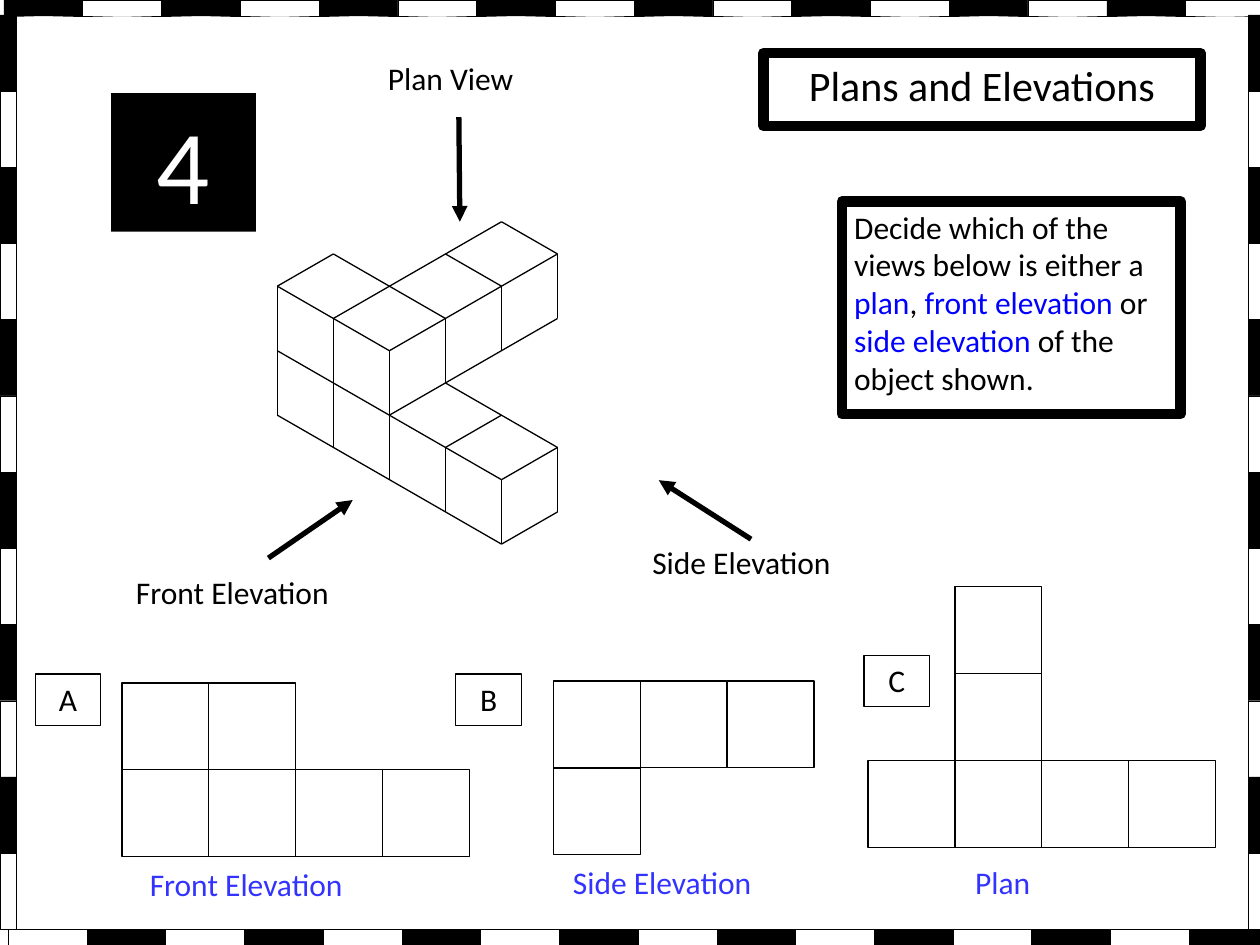
from dataclasses import dataclass

from lxml import etree
from pptx import Presentation
from pptx import util as u
from pptx.dml.color import RGBColor
from pptx.enum import shapes, text
from pptx.oxml import ns

BLACK = RGBColor(0x00, 0x00, 0x00)
WHITE = RGBColor(0xFF, 0xFF, 0xFF)
KEYWORD_BLUE = RGBColor(0x00, 0x00, 0xFF)
ANSWER_BLUE = RGBColor(0x33, 0x33, 0xFF)

FONT = "Calibri"
CELL = 1.75
BORDER_THICKNESS = 0.32
ISO_LEFT, ISO_TOP = 5.59, 5.77
ISO_COLUMN, ISO_ROW = 1.13, 0.65

Point = tuple[float, float]


@dataclass
class Label:
    runs: tuple[str, ...]
    left: float
    top: float
    width: float
    height: float = 1.02
    size: float = 18
    color: RGBColor = BLACK
    centred: bool = False
    outline: float = 0
    fill: RGBColor | None = None


@dataclass
class View:
    left: float
    top: float
    cells: tuple[tuple[int, int], ...]


@dataclass
class Border:
    first: Point
    last: Point
    count: int
    length: float
    rotation: int


EDGES = (
    ((4, 8), (5, 7)), ((4, 8), (0, 4)), ((4, 8), (4, 6)), ((4, 6), (5, 5)),
    ((4, 6), (0, 2)), ((2, 6), (2, 2)), ((3, 7), (3, 5)), ((5, 5), (3, 3)),
    ((2, 4), (5, 1)), ((3, 5), (4, 4)), ((1, 1), (1, 5)), ((2, 2), (5, -1)),
    ((2, 2), (0, 0)), ((1, 1), (4, -2)), ((1, -1), (3, 1)), ((5, 5), (5, 7)),
    ((3, 1), (3, 3)), ((3, -1), (4, 0)), ((4, 0), (4, 2)), ((4, -2), (5, -1)),
    ((5, -1), (5, 1)), ((0, 0), (0, 4)), ((0, 0), (1, -1)),
)

ARROWS = (
    ((5.41, 11.25), (7.11, 10.08)),
    ((15.14, 10.87), (13.28, 9.68)),
    ((9.25, 2.36), (9.27, 4.47)),
)

VIEWS = (
    View(2.46, 13.77, ((0, 0), (1, 0), (0, 1), (1, 1), (2, 1), (3, 1))),
    View(11.16, 13.73, ((0, 0), (1, 0), (2, 0), (0, 1))),
    View(17.5, 11.83, ((1, 0), (1, 1), (0, 2), (1, 2), (2, 2), (3, 2))),
)

BORDERS = (
    Border((0.08, 0), (23.9, 0), 16, 1.59, 0),
    Border((23.97, 18.74), (0.16, 18.74), 16, 1.59, 180),
    Border((24.56, 0.91), (24.56, 17.81), 12, 1.54, 90),
    Border((-0.61, 0.91), (-0.61, 17.81), 12, 1.54, 90),
)

PROMPT = ("Decide which of the views below is either a ", "plan", ", ",
          "front elevation", " or ", "side elevation", " of the object shown.")

LABELS = (
    Label(("Plans and Elevations",), 15.39, 1.07, 8.81, 1.47, 24, centred=True, outline=6),
    Label(PROMPT, 16.97, 4.06, 6.83, 4.29, outline=6),
    Label(("4",), 2.24, 1.88, 2.92, 2.79, 60, WHITE, centred=True, fill=BLACK),
    Label(("Front Elevation",), 2.49, 11.43, 4.95),
    Label(("Side Elevation",), 12.9, 10.82, 4.95),
    Label(("Plan View",), 7.57, 1.07, 3.56),
    Label(("Front Elevation",), 2.77, 17.32, 5.66, color=ANSWER_BLUE),
    Label(("Side Elevation",), 11.3, 17.27, 5.66, color=ANSWER_BLUE),
    Label(("Plan",), 19.41, 17.27, 5.26, color=ANSWER_BLUE),
    *(Label((letter,), left, top, 1.32, 1.04, centred=True, outline=0.75)
      for letter, left, top in (("A", 0.71, 13.59), ("B", 9.19, 13.59), ("C", 17.42, 13.21))),
)


def draw_box(slide, left: float, top: float, width: float, height: float,
             outline: float, fill: RGBColor | None = None):
    box = slide.shapes.add_shape(shapes.MSO_SHAPE.RECTANGLE,
                                 u.Cm(left), u.Cm(top), u.Cm(width), u.Cm(height))
    box.shadow.inherit = False
    if fill is None:
        box.fill.background()
    else:
        box.fill.solid()
        box.fill.fore_color.rgb = fill
    if outline:
        box.line.color.rgb = BLACK
        box.line.width = u.Pt(outline)
    else:
        box.line.fill.background()
    return box


def draw_line(slide, start: Point, end: Point, width: float, arrow: bool = False) -> None:
    edge = slide.shapes.add_connector(shapes.MSO_CONNECTOR.STRAIGHT,
                                      *(u.Cm(value) for value in (*start, *end)))
    edge.line.color.rgb = BLACK
    edge.line.width = u.Pt(width)
    if arrow:
        etree.SubElement(edge.line._get_or_add_ln(), ns.qn("a:tailEnd"), type="triangle")
    etree.SubElement(edge._element.spPr, ns.qn("a:effectLst"))


def iso_point(column: int, row: int) -> Point:
    return ISO_LEFT + column * ISO_COLUMN, ISO_TOP + row * ISO_ROW


def draw_view(slide, view: View) -> None:
    for column, row in view.cells:
        draw_box(slide, view.left + column * CELL, view.top + row * CELL, CELL, CELL, 0.75)


def draw_border(slide, border: Border) -> None:
    for index in range(border.count):
        share = index / (border.count - 1)
        left, top = (a + (b - a) * share for a, b in zip(border.first, border.last))
        tile = draw_box(slide, left, top, border.length, BORDER_THICKNESS, 0.25,
                        WHITE if index % 2 else BLACK)
        tile.rotation = border.rotation


def draw_label(slide, label: Label) -> None:
    if label.outline or label.fill is not None:
        holder = draw_box(slide, label.left, label.top, label.width, label.height,
                          label.outline, label.fill)
    else:
        holder = slide.shapes.add_textbox(u.Cm(label.left), u.Cm(label.top),
                                          u.Cm(label.width), u.Cm(label.height))
    frame = holder.text_frame
    frame.word_wrap = True
    frame.vertical_anchor = text.MSO_ANCHOR.TOP
    paragraph = frame.paragraphs[0]
    paragraph.alignment = text.PP_ALIGN.CENTER if label.centred else text.PP_ALIGN.LEFT
    paragraph.font.name = FONT
    paragraph.font.size = u.Pt(label.size)
    paragraph.font.color.rgb = label.color
    for index, wording in enumerate(label.runs):
        run = paragraph.add_run()
        run.text = wording
        if index % 2:
            run.font.color.rgb = KEYWORD_BLUE


def main() -> None:
    deck = Presentation()
    deck.slide_width, deck.slide_height = u.Cm(25.4), u.Cm(19.05)
    slide = deck.slides.add_slide(deck.slide_layouts[6])
    for start, end in EDGES:
        draw_line(slide, iso_point(*start), iso_point(*end), 0.75)
    for start, end in ARROWS:
        draw_line(slide, start, end, 3, arrow=True)
    for view in VIEWS:
        draw_view(slide, view)
    for border in BORDERS:
        draw_border(slide, border)
    for label in LABELS:
        draw_label(slide, label)
    deck.save("out.pptx")


if __name__ == "__main__":
    main()
